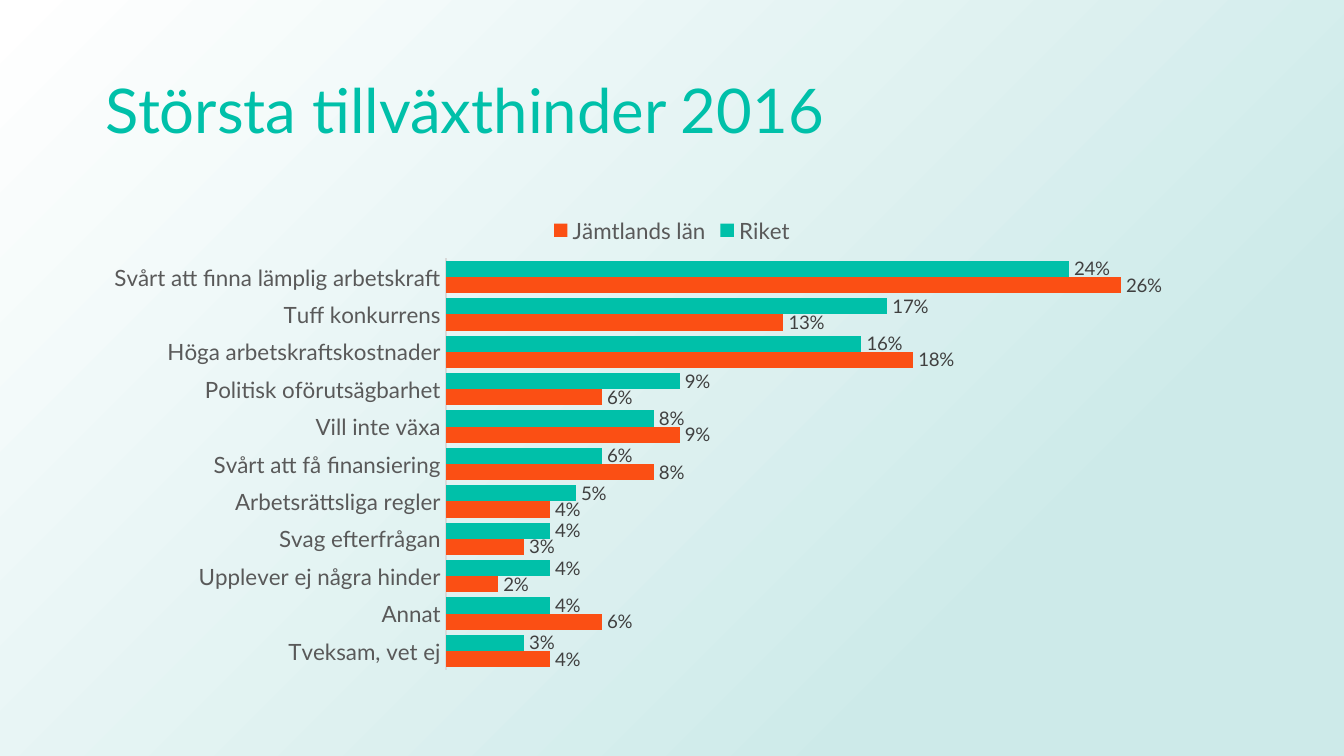
from dataclasses import dataclass

from lxml.etree import SubElement
from pptx import Presentation
from pptx.chart.data import CategoryChartData
from pptx.dml.color import RGBColor
from pptx.enum.chart import (
    XL_CHART_TYPE, XL_LABEL_POSITION, XL_LEGEND_POSITION, XL_TICK_MARK)
from pptx.enum.shapes import MSO_SHAPE
from pptx.enum.text import MSO_ANCHOR
from pptx.oxml import parse_xml
from pptx.oxml.ns import nsdecls, qn
from pptx.util import Inches, Pt


@dataclass(frozen=True)
class Theme:
    face: str = "Lato"
    teal: str = "00C0A9"
    orange: str = "FB4F14"
    mist: str = "CDEAE9"
    white: str = "FFFFFF"
    text: str = "595959"
    label: str = "404040"
    line: str = "D9D9D9"
    title: int = 33
    axis: int = 12
    value: int = 10


THEME = Theme()
WIDTH = Inches(10)
HEIGHT = WIDTH * 9 // 16

# Obstacle, whole country (%), county (%)
ROWS = [
    ("Svårt att finna lämplig arbetskraft", 24, 26),
    ("Tuff konkurrens", 17, 13),
    ("Höga arbetskraftskostnader", 16, 18),
    ("Politisk oförutsägbarhet", 9, 6),
    ("Vill inte växa", 8, 9),
    ("Svårt att få finansiering", 6, 8),
    ("Arbetsrättsliga regler", 5, 4),
    ("Svag efterfrågan", 4, 3),
    ("Upplever ej några hinder", 4, 2),
    ("Annat", 4, 6),
    ("Tveksam, vet ej", 3, 4),
]
SERIES = [("Riket", THEME.teal), ("Jämtlands län", THEME.orange)]


def share(left, top, width, height):
    """Turn shares of the slide into a box."""
    return (int(left * WIDTH), int(top * HEIGHT),
            int(width * WIDTH), int(height * HEIGHT))


def style(font, size, color):
    font.name = THEME.face
    font.size = Pt(size)
    font.color.rgb = RGBColor.from_string(color)


def add_backdrop(slide, box):
    """Fill the box with a glow that spreads from its lower right corner."""
    panel = slide.shapes.add_shape(MSO_SHAPE.RECTANGLE, *box)
    panel.shadow.inherit = False
    panel.line.fill.background()
    panel.fill.solid()
    glow = parse_xml(
        f'<a:gradFill {nsdecls("a")} rotWithShape="1"><a:gsLst>'
        f'<a:gs pos="23000"><a:srgbClr val="{THEME.mist}"/></a:gs>'
        f'<a:gs pos="100000"><a:srgbClr val="{THEME.white}"/></a:gs>'
        '</a:gsLst><a:path path="circle">'
        '<a:fillToRect l="100000" t="100000"/></a:path></a:gradFill>')
    props = panel.element.spPr
    props.replace(props.find(qn("a:solidFill")), glow)


def add_title(slide, box, words):
    frame = slide.shapes.add_textbox(*box).text_frame
    frame.word_wrap = True
    frame.vertical_anchor = MSO_ANCHOR.MIDDLE
    line = frame.paragraphs[0]
    line.text = words
    line.line_spacing = 0.9
    style(line.font, THEME.title, THEME.teal)


def place_plot(chart, **area):
    """Fix the inner plot area, given as shares of the chart."""
    plot = chart.element.find(".//" + qn("c:plotArea"))
    layout = plot.find(qn("c:layout"))
    if layout is None:
        layout = plot.makeelement(qn("c:layout"))
        plot.insert(0, layout)
    manual = SubElement(layout, qn("c:manualLayout"))
    parts = {"layoutTarget": "inner", "xMode": "edge", "yMode": "edge", **area}
    for tag, val in parts.items():
        SubElement(manual, qn("c:" + tag)).set("val", str(val))


def style_axes(chart):
    names = chart.category_axis
    names.reverse_order = True
    names.major_tick_mark = XL_TICK_MARK.NONE
    names.format.line.color.rgb = RGBColor.from_string(THEME.line)
    names.format.line.width = Pt(0.75)
    style(names.tick_labels.font, THEME.axis, THEME.text)
    scale = chart.value_axis
    scale.visible = False
    scale.has_major_gridlines = False
    scale.minimum_scale = 0
    scale.maximum_scale = 0.3


def style_bars(plot):
    plot.gap_width = 30
    plot.overlap = 0
    plot.vary_by_categories = False
    for bars, (_, color) in zip(plot.series, SERIES):
        bars.format.fill.solid()
        bars.format.fill.fore_color.rgb = RGBColor.from_string(color)
        labels = bars.data_labels
        labels.show_value = True
        labels.number_format = "0%"
        labels.number_format_is_linked = False
        labels.position = XL_LABEL_POSITION.OUTSIDE_END
        style(labels.font, THEME.value, THEME.label)


def add_bars(slide, box):
    names, *columns = zip(*ROWS)
    data = CategoryChartData(number_format="0%")
    data.categories = names
    for (name, _), values in zip(SERIES, columns):
        data.add_series(name, [value / 100 for value in values])
    chart = slide.shapes.add_chart(
        XL_CHART_TYPE.BAR_CLUSTERED, *box, data).chart
    chart.has_title = False
    style(chart.font, THEME.value, THEME.text)
    chart.has_legend = True
    chart.legend.position = XL_LEGEND_POSITION.TOP
    chart.legend.include_in_layout = False
    style(chart.legend.font, THEME.axis, THEME.text)
    style_axes(chart)
    style_bars(chart.plots[0])
    place_plot(chart, x=0.305, y=0.118, w=0.672, h=0.86)


def main():
    deck = Presentation()
    deck.slide_width, deck.slide_height = WIDTH, HEIGHT
    slide = deck.slides.add_slide(deck.slide_layouts[6])
    add_backdrop(slide, share(0, 0, 1, 1))
    add_title(slide, share(0.069, 0.053, 0.862, 0.194),
              "Största tillväxthinder 2016")
    add_bars(slide, share(0.069, 0.267, 0.862, 0.633))
    deck.save("out.pptx")


if __name__ == "__main__":
    main()
